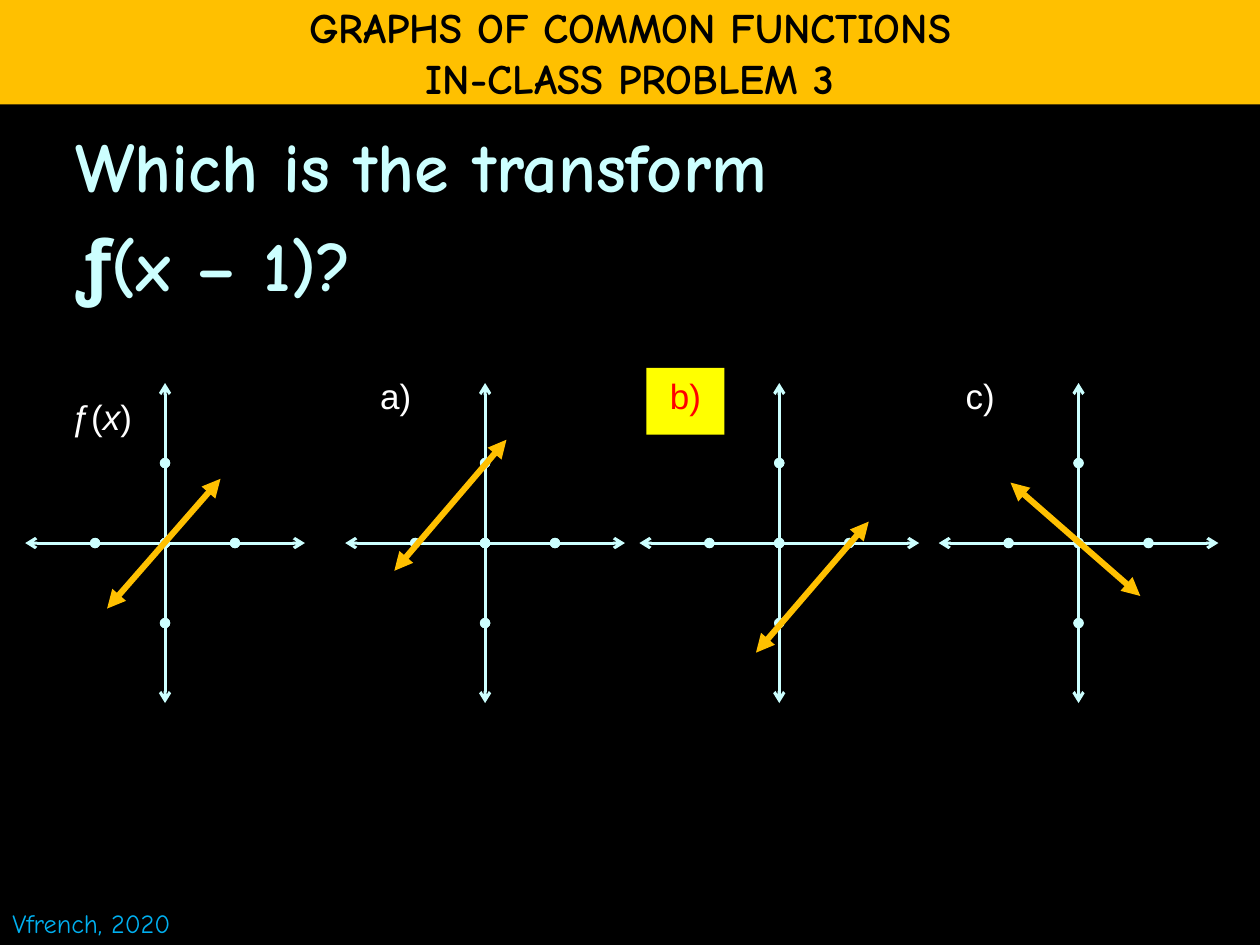
"""Build the in-class problem slide on shifting the graph of a line."""
import lxml.etree
import pptx
import pptx.dml.color
import pptx.enum.shapes
import pptx.enum.text
import pptx.oxml.ns
import pptx.util

RGB = pptx.dml.color.RGBColor
BLACK = RGB(0x00, 0x00, 0x00)
WHITE = RGB(0xFF, 0xFF, 0xFF)
ICE = RGB(0xCC, 0xFF, 0xFF)
GOLD = RGB(0xFF, 0xC0, 0x00)
YELLOW = RGB(0xFF, 0xFF, 0x00)
RED = RGB(0xFF, 0x00, 0x00)
BLUE = RGB(0x00, 0xB0, 0xF0)
ALIGN = pptx.enum.text.PP_ALIGN
ANCHOR = pptx.enum.text.MSO_ANCHOR

prs = pptx.Presentation()
prs.slide_width = pptx.util.Inches(10)
prs.slide_height = pptx.util.Inches(7.5)
COL = prs.slide_width / 100
ROW = prs.slide_height / 75
s = prs.slides.add_slide(prs.slide_layouts[6])
s.background.fill.solid()
s.background.fill.fore_color.rgb = BLACK


def add_line(shapes, x1, y1, x2, y2, color, width, head, tail):
    ends = [int(v) for v in (x1 * COL, y1 * ROW, x2 * COL, y2 * ROW)]
    c = shapes.add_connector(pptx.enum.shapes.MSO_CONNECTOR.STRAIGHT, *ends)
    c.line.color.rgb = color
    c.line.width = pptx.util.Pt(width)
    ln = c.line._get_or_add_ln()
    for tag, kind in (("a:headEnd", head), ("a:tailEnd", tail)):
        lxml.etree.SubElement(ln, pptx.oxml.ns.qn(tag)).set("type", kind)
    lxml.etree.SubElement(c._element.spPr, pptx.oxml.ns.qn("a:effectLst"))


def add_text(box, paragraphs, font, size, color, bold=False, align=ALIGN.LEFT,
             fill=None, wrap=True, anchor=ANCHOR.TOP, before=0):
    x, y, w, h = [int(v * u) for v, u in zip(box, (COL, ROW, COL, ROW))]
    if fill is None:
        sp = s.shapes.add_textbox(x, y, w, h)
    else:
        sp = s.shapes.add_shape(pptx.enum.shapes.MSO_SHAPE.RECTANGLE, x, y, w, h)
        sp.shadow.inherit = False
        sp.fill.solid()
        sp.fill.fore_color.rgb = fill
        sp.line.fill.background()
    tf = sp.text_frame
    tf.word_wrap = wrap
    tf.vertical_anchor = anchor
    for i, runs in enumerate(paragraphs):
        p = tf.add_paragraph() if i else tf.paragraphs[0]
        p.alignment = align
        p.space_before = pptx.util.Pt(before)
        for text, italic in runs:
            r = p.add_run()
            r.text = text
            r.font.name = font
            r.font.size = pptx.util.Pt(size)
            r.font.bold = bold
            r.font.italic = italic
            r.font.color.rgb = color


AXIS_Y, TICK_X, TICK_Y = 43.1, 5.55, 6.35
graphs = [
    (13.1, (-4.6, 5.2, 4.4, -5.1)),
    (38.5, (-7.2, 2.2, 1.7, -8.2)),
    (61.85, (-1.85, 8.7, 7.1, -1.7)),
    (85.6, (-5.4, -4.8, 4.9, 4.2)),
]
for origin, _ in graphs:
    axes = s.shapes.add_group_shape().shapes
    for dx, dy in ((TICK_X, 0), (0, -TICK_Y)):
        for k in range(-2, 2):
            add_line(axes, origin + k * dx, AXIS_Y + k * dy,
                     origin + (k + 1) * dx, AXIS_Y + (k + 1) * dy, ICE, 1.75,
                     "arrow" if k == -2 else "oval", "arrow" if k == 1 else "oval")

add_text((5, 9.2, 90, 61.7),
         [[("Which is the transform", False)], [("ƒ(x – 1)?", False)]],
         "Comic Neue", 40, ICE, bold=True, before=9)
add_text((0, 0, 100, 8.3),
         [[("GRAPHS OF COMMON FUNCTIONS", False)], [("IN-CLASS PROBLEM 3", False)]],
         "Comic Neue", 24, BLACK, bold=True, align=ALIGN.CENTER, fill=GOLD,
         wrap=False, anchor=ANCHOR.MIDDLE)
add_text((0, 71.5, 16.4, 3.5), [[("Vfrench, 2020", False)]],
         "Comic Neue", 15, BLUE, wrap=False)
for x, h, label, color, fill in ((51.3, 5.3, "b)", RED, YELLOW),
                                 (28.3, 3.3, "a)", WHITE, None),
                                 (74.7, 3.3, "c)", WHITE, None)):
    add_text((x, 29.2, 6.2, h), [[(label, False)]], "Arial", 20, color,
             align=ALIGN.CENTER, fill=fill)
add_text((4.7, 30.9, 10.3, 4.9), [[("ƒ(", False), ("x", True), (")", False)]],
         "Arial", 20, WHITE)

for origin, (x1, y1, x2, y2) in graphs:
    add_line(s.shapes, origin + x1, AXIS_Y + y1, origin + x2, AXIS_Y + y2,
             GOLD, 3.5, "triangle", "triangle")

prs.save("out.pptx")
